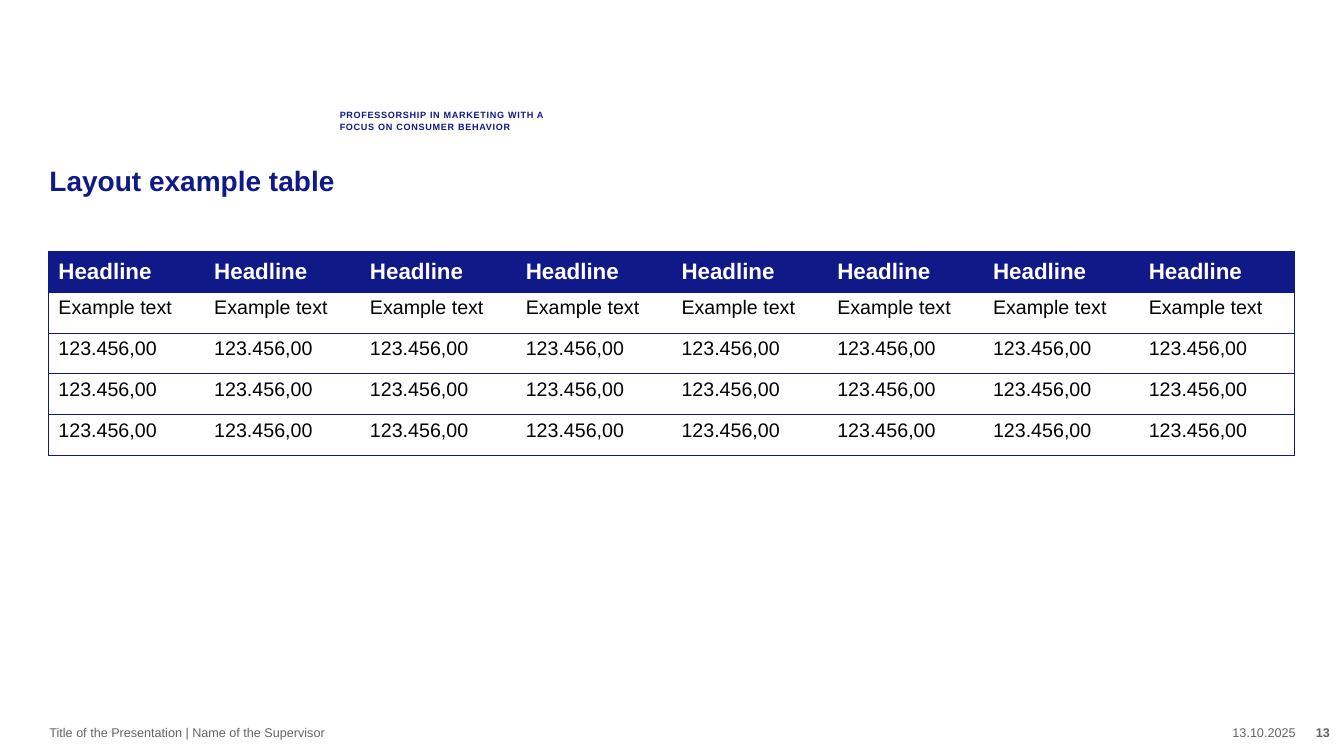
from dataclasses import dataclass, field

from lxml import etree
from pptx import Presentation
from pptx import util as u
from pptx.dml.color import RGBColor
from pptx.enum import text as t
from pptx.oxml import ns

NAVY = RGBColor(0x0F, 0x19, 0x87)
GRAY = RGBColor(0x62, 0x64, 0x68)
WHITE = RGBColor(0xFF, 0xFF, 0xFF)
BLACK = RGBColor(0x00, 0x00, 0x00)
COLS = 8
ROWS = ["Headline", "Example text"] + ["123.456,00"] * 3


@dataclass
class Label:
    words: str
    at: tuple[float, float, float, float]
    size: float = 9
    color: RGBColor = GRAY
    bold: bool = False
    inset: tuple[float, float, float, float] = (0, 0, 0, 0)
    frame: dict = field(default_factory=lambda: {"vertical_anchor": t.MSO_ANCHOR.MIDDLE})
    para: dict = field(default_factory=lambda: {"alignment": t.PP_ALIGN.LEFT})
    track: int = 0


RIGHT = {"alignment": t.PP_ALIGN.RIGHT}
TITLE = Label("Layout example table", (0.49, 1.62, 12.36, 0.71), 20, NAVY, True,
              frame={"vertical_anchor": t.MSO_ANCHOR.TOP})
LABELS = [
    Label("PROFESSORSHIP IN MARKETING WITH A FOCUS ON CONSUMER BEHAVIOR",
          (3.33, 0.48, 2.2, 0.87), 6.5, NAVY, True, (0.04, 0, 0, 0.04),
          {"vertical_anchor": t.MSO_ANCHOR.BOTTOM}, {"line_spacing": 1.1}, 50),
    Label("Title of the Presentation | Name of the Supervisor", (0.49, 7.13, 11.09, 0.28)),
    Label("13.10.2025", (11.62, 7.13, 1.23, 0.28), para=RIGHT),
    Label("13", (12.89, 7.13, 0.44, 0.28), bold=True, inset=(0, 0, 0.14, 0), para=RIGHT),
]


def apply(item, form: dict) -> None:
    for key, value in form.items():
        setattr(item, key, value)


def style(run, size: float, color: RGBColor, bold: bool) -> None:
    apply(run.font, {"name": "Arial", "size": u.Pt(size), "bold": bold})
    run.font.color.rgb = color


def write(shape, label: Label) -> None:
    sides = ("left", "top", "width", "height")
    apply(shape, {side: u.Inches(n) for side, n in zip(sides, label.at)})
    frame = shape.text_frame
    edges = ("margin_left", "margin_top", "margin_right", "margin_bottom")
    apply(frame, {edge: u.Inches(n) for edge, n in zip(edges, label.inset)})
    apply(frame, {"word_wrap": True, "auto_size": t.MSO_AUTO_SIZE.NONE} | label.frame)
    para = frame.paragraphs[0]
    apply(para, label.para)
    run = para.add_run()
    run.text = label.words
    style(run, label.size, label.color, label.bold)
    if label.track:
        run.font._element.set("spc", str(label.track))


def border(cell, side: str, shown: bool) -> None:
    props = cell._tc.get_or_add_tcPr()
    line = etree.SubElement(props, ns.qn(f"a:ln{side}"), w=str(u.Pt(0.5)))
    if shown:
        fill = etree.SubElement(line, ns.qn("a:solidFill"))
        etree.SubElement(fill, ns.qn("a:srgbClr"), val=str(NAVY))
    else:
        etree.SubElement(line, ns.qn("a:noFill"))


def fill_cell(cell, words: str, head: bool, first: bool, last: bool) -> None:
    for side, shown in {"L": first, "R": last, "T": True, "B": True}.items():
        border(cell, side, shown)
    if head:
        cell.fill.solid()
        cell.fill.fore_color.rgb = NAVY
    else:
        cell.fill.background()
    cell.vertical_anchor = t.MSO_ANCHOR.MIDDLE if head else t.MSO_ANCHOR.TOP
    run = cell.text_frame.paragraphs[0].add_run()
    run.text = words
    style(run, 16 if head else 14, WHITE if head else BLACK, head)


def draw_table(slide) -> None:
    box = [u.Inches(n) for n in (0.48, 2.49, 12.36, 2.03)]
    table = slide.shapes.add_table(len(ROWS), COLS, *box).table
    table.horz_banding = False
    for row, words in enumerate(ROWS):
        for col in range(COLS):
            fill_cell(table.cell(row, col), words, row == 0, col == 0, col == COLS - 1)


def main() -> None:
    deck = Presentation()
    apply(deck, {"slide_width": u.Inches(13.33), "slide_height": u.Inches(7.5)})
    slide = deck.slides.add_slide(deck.slide_layouts[5])
    title = slide.shapes.title
    write(title, TITLE)
    for label in LABELS:
        write(slide.shapes.add_textbox(0, 0, 0, 0), label)
    draw_table(slide)
    deck.save("out.pptx")


if __name__ == "__main__":
    main()
